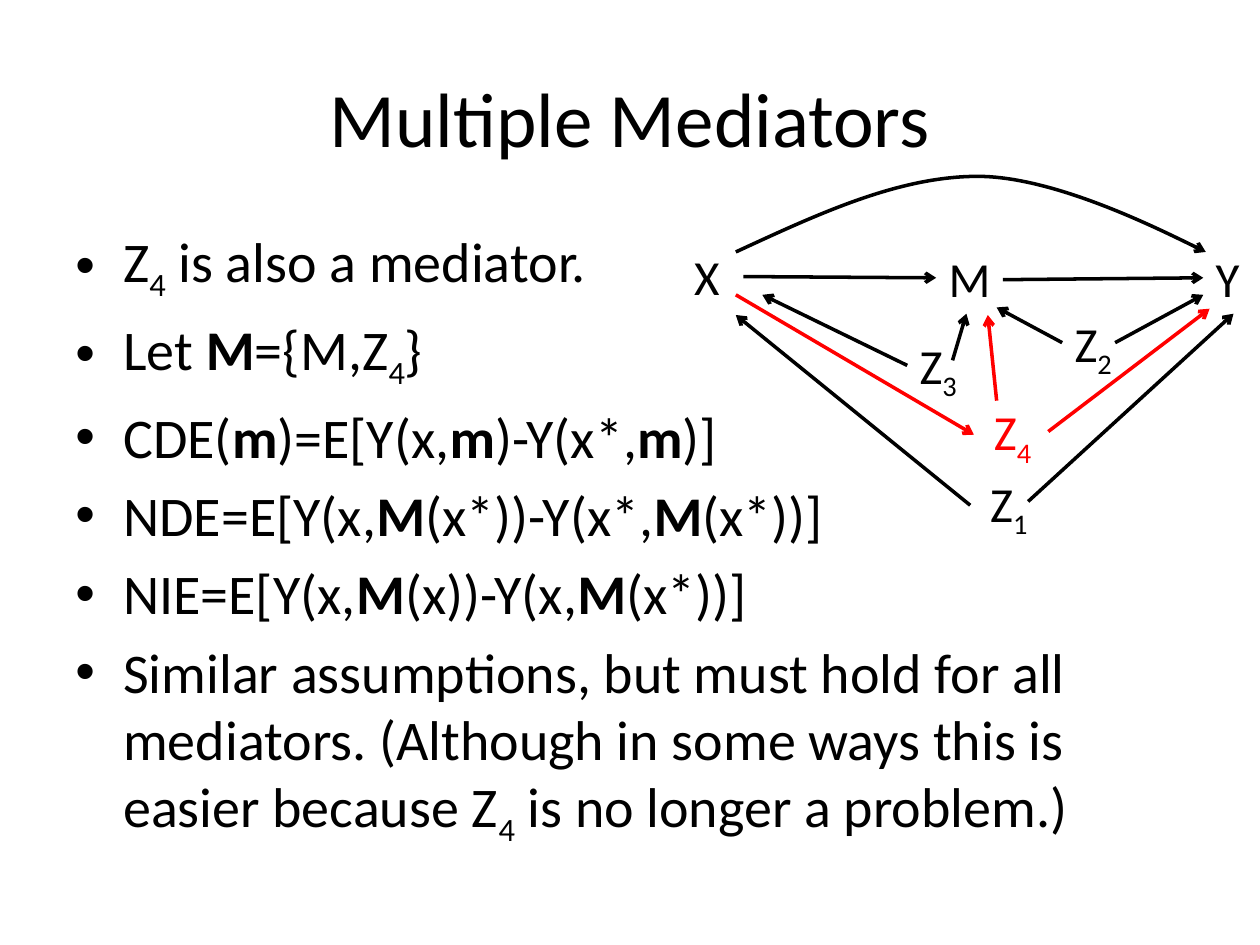
from typing import NamedTuple, Optional

from lxml.etree import SubElement
from pptx import Presentation
from pptx.dml.color import RGBColor
from pptx.enum.shapes import MSO_CONNECTOR as Link
from pptx.enum.text import MSO_ANCHOR as Anchor, PP_ALIGN as Align
from pptx.oxml.ns import qn
from pptx.util import Inches, Pt

BLACK = RGBColor(0, 0, 0)
RED = RGBColor(255, 0, 0)
FACE = "Calibri"
COLS, ROWS = 100, 75
LEFT, RIGHT = 1, 3

deck = Presentation()
deck.slide_width, deck.slide_height = Inches(10), Inches(7.5)
slide = deck.slides.add_slide(deck.slide_layouts[6])


class Node(NamedTuple):
    name: str
    text: str
    col: float
    row: float
    width: float = 5.3
    color: RGBColor = BLACK


class Arrow(NamedTuple):
    start: tuple
    end: tuple
    color: RGBColor = BLACK
    tail: Optional[str] = None
    head: Optional[str] = None


NODES = [
    Node("X", "X", 54.1, 19.1, 4.9),
    Node("M", "M", 74.3, 19.2, 4.9),
    Node("Y", "Y", 95.5, 19.2, 4.9),
    Node("Z4", "Z|_4", 77.9, 31.4, color=RED),
    Node("Z2", "Z|_2", 84.3, 24.4),
    Node("Z3", "Z|_3", 72, 26.1),
    Node("Z1", "Z|_1", 77.6, 37.1),
]

ARROWS = [
    Arrow((59, 21.9), (74.3, 22.1), tail="X", head="M"),
    Arrow((79.6, 22.2), (95.5, 22.2), head="Y"),
    Arrow((88.5, 27.2), (95.5, 23.4)),
    Arrow((58.4, 23.4), (77.3, 34.5), RED),
    Arrow((83.2, 34.2), (96, 24.5), RED, tail="Z4"),
    Arrow((84.3, 27.2), (79.1, 24.4)),
    Arrow((72, 29), (60.5, 23.4)),
    Arrow((75.6, 28.6), (76.7, 24.9)),
    Arrow((79.1, 31.8), (78.4, 25), RED),
    Arrow((81.6, 39.8), (97.9, 24.9)),
    Arrow((77, 40.1), (58.4, 25)),
]

ARC = [(58.4, 20), (64.9, 17), (71.3, 14), (77.6, 14),
       (83.8, 14), (95.7, 20), (95.7, 20)]

POINTS = [
    "Z|_4| is also a mediator.",
    "Let |^M|={M,Z|_4|}",
    "CDE(|^m|)=E[Y(x,|^m|)-Y(x*,|^m|)]",
    "NDE=E[Y(x,|^M|(x*))-Y(x*,|^M|(x*))]",
    "NIE=E[Y(x,|^M|(x))-Y(x,|^M|(x*))]",
    "Similar assumptions, but must hold for all mediators. (Although in some "
    "ways this is easier because Z|_4| is no longer a problem.)",
]


def across(cols: float) -> int:
    return round(deck.slide_width * cols / COLS)


def down(rows: float) -> int:
    return round(deck.slide_height * rows / ROWS)


def spot(point: tuple) -> tuple:
    return across(point[0]), down(point[1])


def write(par, text: str, size: float, color: RGBColor = BLACK) -> None:
    par.font.name, par.font.size = FACE, Pt(size)
    par.font.color.rgb = color
    for part in text.split("|"):
        run = par.add_run()
        run.text = part.lstrip("_^")
        if part.startswith("^"):
            run.font.bold = True
        elif part.startswith("_"):
            run._r.get_or_add_rPr().set("baseline", "-25000")


def add_box(col: float, row: float, width: float, height: float):
    box = slide.shapes.add_textbox(*spot((col, row)), *spot((width, height)))
    box.text_frame.word_wrap = True
    return box


def add_title(text: str) -> None:
    frame = add_box(5, 3, 90, 12.5).text_frame
    frame.vertical_anchor = Anchor.MIDDLE
    par = frame.paragraphs[0]
    par.alignment = Align.CENTER
    write(par, text, 44)


def add_list(points: list) -> None:
    frame = add_box(5, 17.5, 90, 49.5).text_frame
    for i, text in enumerate(points):
        par = frame.add_paragraph() if i else frame.paragraphs[0]
        par.space_before = Pt(6.4)
        props = par._p.get_or_add_pPr()
        props.set("marL", str(Inches(0.38)))
        props.set("indent", str(-Inches(0.38)))
        SubElement(props, qn("a:buFont")).set("typeface", "Arial")
        SubElement(props, qn("a:buChar")).set("char", "•")
        write(par, text, 32)


def add_node(node: Node):
    box = add_box(node.col, node.row, node.width, 5.7)
    write(box.text_frame.paragraphs[0], node.text, 28, node.color)
    return box


def ink(shape, color: RGBColor) -> None:
    shape.line.color.rgb = color
    shape.line.width = Pt(2)
    SubElement(shape.line._get_or_add_ln(), qn("a:tailEnd")).set("type", "arrow")


def add_arrow(arrow: Arrow, boxes: dict) -> None:
    line = slide.shapes.add_connector(
        Link.STRAIGHT, *spot(arrow.start), *spot(arrow.end))
    if arrow.tail:
        line.begin_connect(boxes[arrow.tail], RIGHT)
    if arrow.head:
        line.end_connect(boxes[arrow.head], LEFT)
    ink(line, arrow.color)
    SubElement(line._element.spPr, qn("a:effectLst"))


def add_arc(points: list) -> None:
    start, *rest = map(spot, points)
    pen = slide.shapes.build_freeform(*start)
    pen.add_line_segments(rest, close=False)
    arc = pen.convert_to_shape()
    arc.shadow.inherit = False
    arc.fill.background()
    ink(arc, BLACK)
    track = arc._element.find(".//" + qn("a:path"))
    steps = track.findall(qn("a:lnTo"))
    for i in range(0, len(steps), 3):
        curve = SubElement(track, qn("a:cubicBezTo"))
        for step in steps[i:i + 3]:
            curve.append(step[0])
            track.remove(step)


add_title("Multiple Mediators")
add_list(POINTS)
boxes = {node.name: add_node(node) for node in NODES}
for arrow in ARROWS:
    add_arrow(arrow, boxes)
add_arc(ARC)
deck.save("out.pptx")
